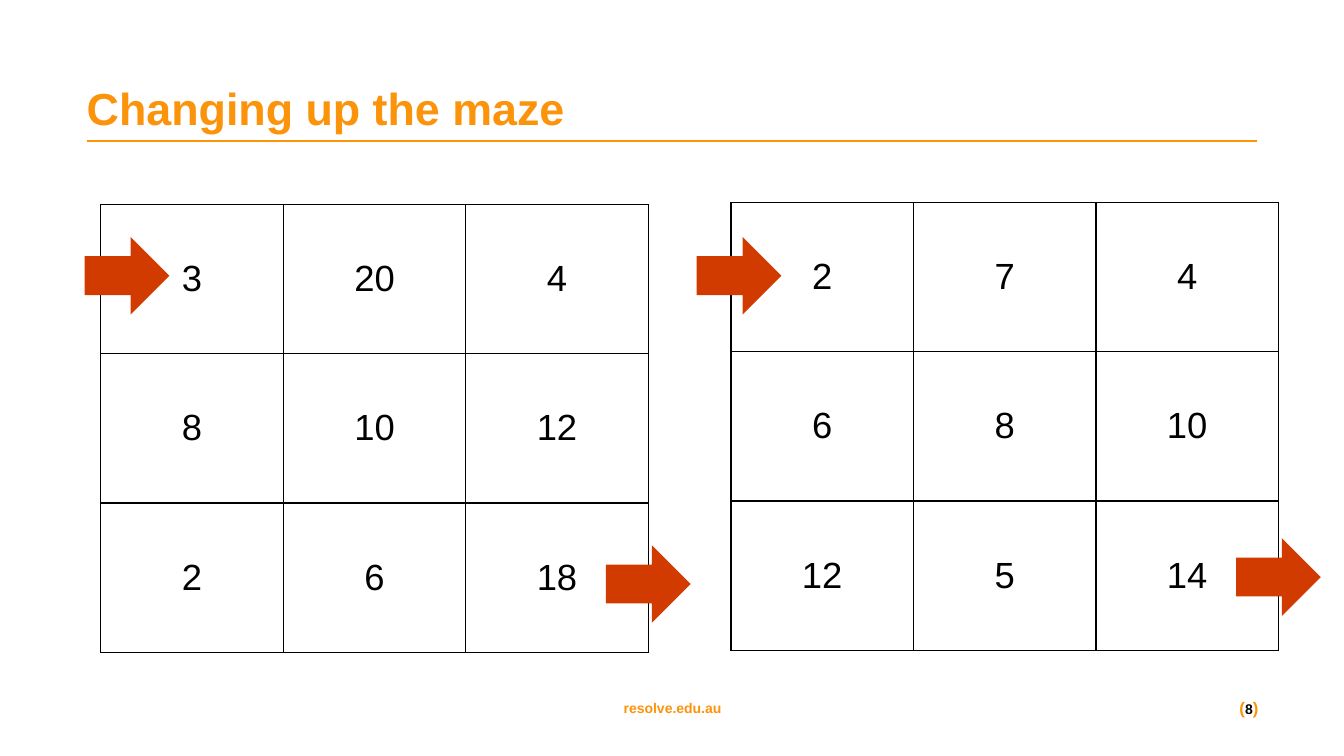
from lxml import etree
from pptx import Presentation
from pptx.dml.color import RGBColor
from pptx.enum.shapes import MSO_CONNECTOR, MSO_SHAPE
from pptx.enum.text import MSO_ANCHOR, PP_ALIGN
from pptx.oxml import parse_xml
from pptx.oxml.ns import nsdecls, qn
from pptx.util import Inches, Pt

LEFT, CENTER, RIGHT = PP_ALIGN.LEFT, PP_ALIGN.CENTER, PP_ALIGN.RIGHT
MIDDLE = MSO_ANCHOR.MIDDLE
RIGHT_ARROW = MSO_SHAPE.RIGHT_ARROW
STRAIGHT = MSO_CONNECTOR.STRAIGHT

MAZES = [
    {
        "corner": (1, 2.03),
        "numbers": [[3, 20, 4], [8, 10, 12], [2, 6, 18]],
        "arrows": [(0.84, 2.35), (6.01, 5.41)],
    },
    {
        "corner": (7.25, 2.01),
        "numbers": [[2, 7, 4], [6, 8, 10], [12, 5, 14]],
        "arrows": [(6.91, 2.35), (12.26, 5.34)],
    },
]


def rgb(value):
    return RGBColor.from_string(value)


class MazeSlide:
    """Draws number mazes and their surrounding text in one style."""

    font = "Arial"
    orange, red, black = "FC940B", "D13B00", "000000"
    cell_width, cell_height = 1.81, 1.48

    def __init__(self, slide):
        self.slide = slide

    def format_run(self, run, size, color, bold=False):
        run.font.name = self.font
        run.font.size = Pt(size)
        run.font.bold = bold
        run.font.color.rgb = rgb(color)

    def text(self, box, parts, align=LEFT):
        shape = self.slide.shapes.add_textbox(*map(Inches, box))
        frame = shape.text_frame
        frame.word_wrap = True
        frame.vertical_anchor = MIDDLE
        frame.margin_left = frame.margin_right = 0
        frame.margin_top = frame.margin_bottom = 0
        paragraph = frame.paragraphs[0]
        paragraph.alignment = align
        for content, size, color in parts:
            run = paragraph.add_run()
            run.text = content
            self.format_run(run, size, color, bold=True)

    def rule(self, left, right, top):
        line = self.slide.shapes.add_connector(
            STRAIGHT, Inches(left), Inches(top), Inches(right), Inches(top)
        )
        line.line.color.rgb = rgb(self.orange)
        line.line.width = Pt(1.5)
        etree.SubElement(line._element.spPr, qn("a:effectLst"))

    def arrow(self, left, top):
        shape = self.slide.shapes.add_shape(
            RIGHT_ARROW, Inches(left), Inches(top), Inches(0.84), Inches(0.77)
        )
        shape.shadow.inherit = False
        shape.fill.solid()
        shape.fill.fore_color.rgb = rgb(self.red)
        shape.line.fill.background()

    def border(self, cell):
        properties = cell._tc.get_or_add_tcPr()
        for side in ("lnL", "lnR", "lnT", "lnB"):
            properties.append(parse_xml(
                f'<a:{side} {nsdecls("a")} w="{Pt(1)}"><a:solidFill>'
                f'<a:srgbClr val="{self.black}"/></a:solidFill></a:{side}>'
            ))

    def grid(self, left, top, numbers):
        rows, columns = len(numbers), len(numbers[0])
        table = self.slide.shapes.add_table(
            rows, columns, Inches(left), Inches(top),
            Inches(columns * self.cell_width), Inches(rows * self.cell_height),
        ).table
        table.first_row = table.horz_banding = False
        for row, values in enumerate(numbers):
            for column, value in enumerate(values):
                cell = table.cell(row, column)
                cell.text_frame.text = str(value)
                cell.vertical_anchor = MIDDLE
                cell.margin_left = cell.margin_right = Inches(0.07)
                cell.margin_top = cell.margin_bottom = Inches(0.03)
                paragraph = cell.text_frame.paragraphs[0]
                paragraph.alignment = CENTER
                self.format_run(paragraph.runs[0], 26, self.black)
                self.border(cell)
                cell.fill.background()


def main():
    presentation = Presentation()
    presentation.slide_width = Inches(13.33)
    presentation.slide_height = Inches(7.5)
    page = MazeSlide(presentation.slides.add_slide(presentation.slide_layouts[6]))

    page.rule(0.86, 12.47, 1.4)
    page.text((0.86, 0.78, 11.61, 0.58), [("Changing up the maze", 32, page.orange)])
    page.text((4.36, 6.85, 4.62, 0.34), [("resolve.edu.au", 10, page.orange)], CENTER)
    page.text(
        (11.69, 6.85, 0.79, 0.34),
        [("(", 12, page.orange), ("8", 10, page.black), (")", 12, page.orange)],
        RIGHT,
    )
    for maze in MAZES:
        page.grid(*maze["corner"], maze["numbers"])
        for position in maze["arrows"]:
            page.arrow(*position)

    presentation.save("out.pptx")


if __name__ == "__main__":
    main()
